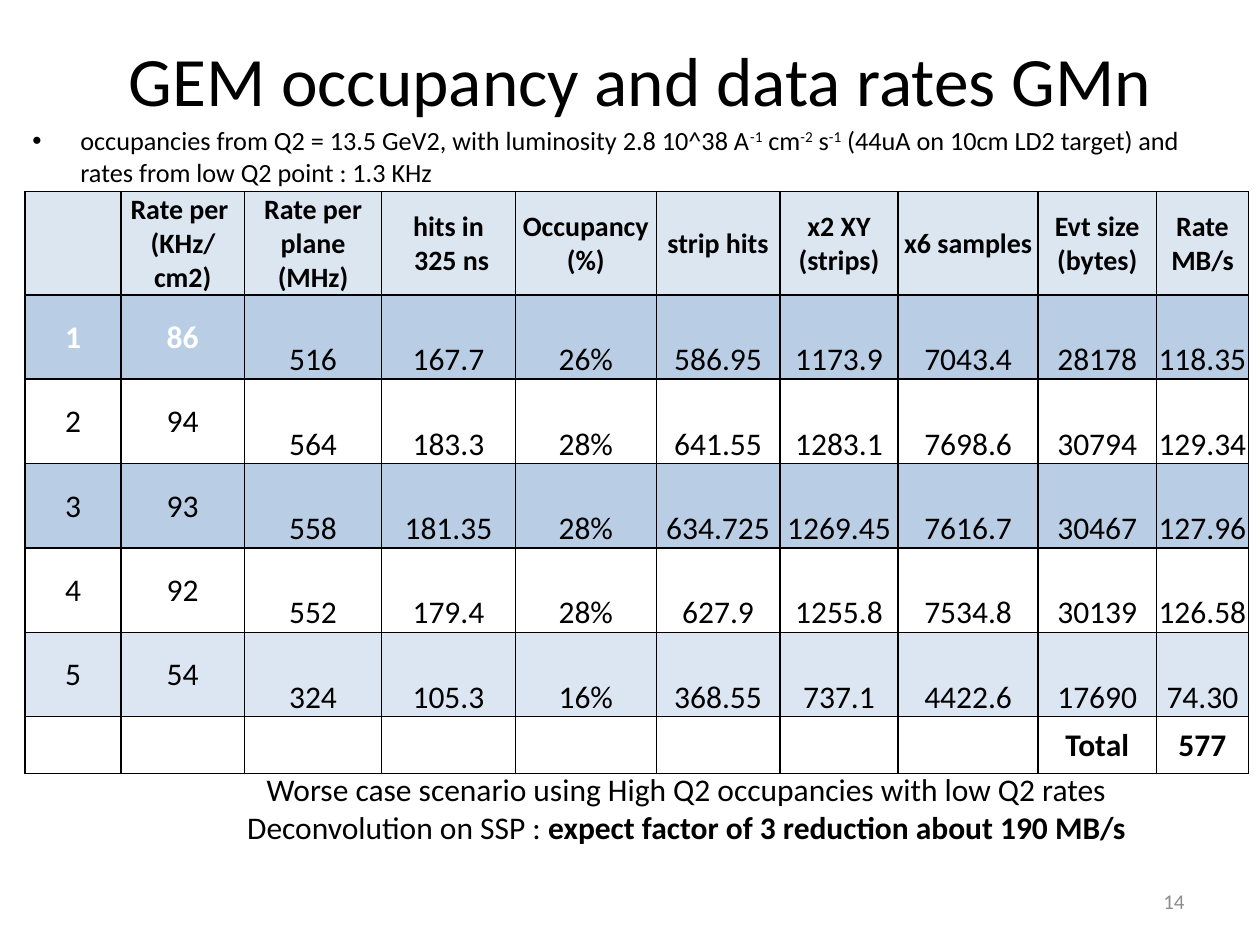
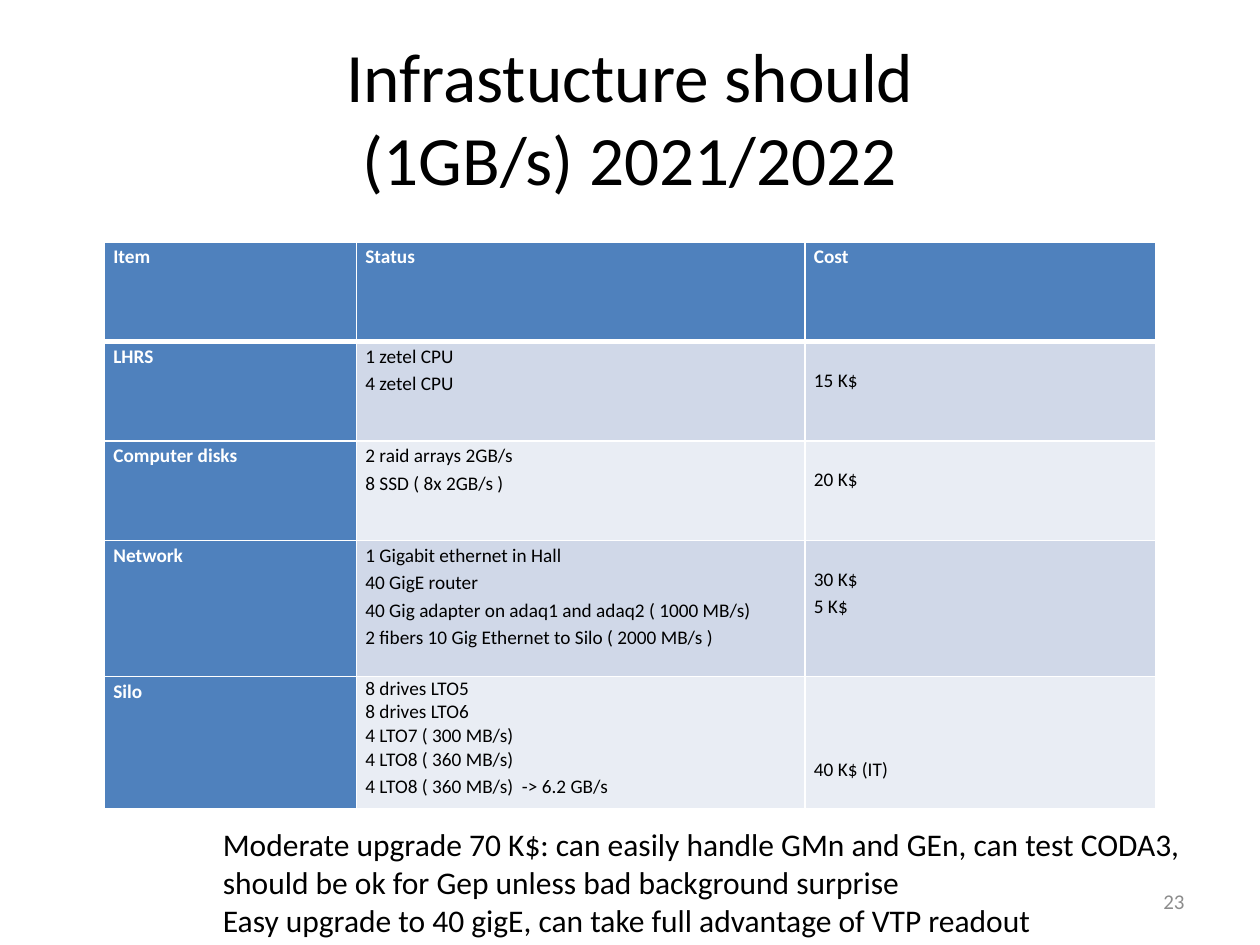
from dataclasses import dataclass, replace

from lxml import etree
from pptx import Presentation
from pptx.dml.color import RGBColor
from pptx.enum.text import MSO_ANCHOR, PP_ALIGN
from pptx.oxml.ns import qn
from pptx.util import Inches, Pt

LEFT, CENTER, RIGHT = PP_ALIGN.LEFT, PP_ALIGN.CENTER, PP_ALIGN.RIGHT
TOP, MIDDLE, BOTTOM = MSO_ANCHOR.TOP, MSO_ANCHOR.MIDDLE, MSO_ANCHOR.BOTTOM

FONT = "Calibri"
BLACK = "000000"
WHITE = "FFFFFF"
NUMBER_GREY = "8C8C8C"
RATE_HEADER = "DCE6F1"
RATE_FILLS = ["B9CDE5", WHITE, "B9CDE5", WHITE, "DCE6F2", WHITE]
ITEM_BLUE = "4F81BD"
ITEM_FILLS = ["D0D8E8", "E9EDF4"]


@dataclass(frozen=True)
class Run:
    text: str
    bold: bool = False
    raised: bool = False


@dataclass(frozen=True)
class Style:
    size: float
    color: str = BLACK
    bold: bool = False
    align: int = LEFT
    line_spacing: float = 1.0


@dataclass(frozen=True)
class Box:
    left: float
    top: float
    width: float
    height: float


@dataclass(frozen=True)
class CellLook:
    fill: str
    anchor: int
    margins: tuple[float, float, float, float]
    border: str
    top_line: float = 1
    bottom_line: float = 1


@dataclass(frozen=True)
class Upgrade:
    item: str
    status: list[str]
    cost: list[str]
    cost_offset: float
    height: float = 0.79


TITLE = Style(39.6, align=CENTER)
BULLET = Style(15)
REMARK = Style(18)
PAGE_NUMBER = Style(12, NUMBER_GREY, align=RIGHT)
RATE_HEAD = Style(16, bold=True, align=CENTER)
RATE_VALUE = Style(18, align=CENTER)
ITEM_LABEL = Style(11, WHITE, True, line_spacing=1.15)
ITEM_TEXT = Style(11, line_spacing=1.15)

RATE_WIDTHS = [0.76, 0.98, 1.09, 1.06, 1.12, 0.98, 0.94, 1.11, 0.94, 0.73]
RATE_HEIGHTS = [0.82] + [0.67] * 5 + [0.45]
RATE_HEADINGS = [
    [], ["Rate per ", "(KHz/cm2)"], ["Rate per plane", "(MHz)"],
    ["hits in", " 325 ns"], ["Occupancy", "(%)"], ["strip hits"],
    ["x2 XY", "(strips)"], ["x6 samples"], ["Evt size", "(bytes)"],
    ["Rate MB/s"],
]
RATE_ROWS = [
    ["1", "86", "516", "167.7", "26%", "586.95", "1173.9", "7043.4", "28178", "118.35"],
    ["2", "94", "564", "183.3", "28%", "641.55", "1283.1", "7698.6", "30794", "129.34"],
    ["3", "93", "558", "181.35", "28%", "634.725", "1269.45", "7616.7", "30467", "127.96"],
    ["4", "92", "552", "179.4", "28%", "627.9", "1255.8", "7534.8", "30139", "126.58"],
    ["5", "54", "324", "105.3", "16%", "368.55", "737.1", "4422.6", "17690", "74.30"],
    [""] * 8 + ["Total", "577"],
]
ITEM_WIDTHS = [2, 3.56, 2.78]
UPGRADES = [
    Upgrade("LHRS", ["1 zetel CPU", "4 zetel CPU"], ["15 K$"], 0.19),
    Upgrade("Computer disks", ["2 raid arrays 2GB/s", "8 SSD ( 8x 2GB/s )"],
            ["20 K$"], 0.19),
    Upgrade("Network", ["1 Gigabit ethernet in Hall", "40 GigE router",
                        "40 Gig adapter on adaq1 and adaq2 ( 1000 MB/s)",
                        "2 fibers 10 Gig Ethernet to Silo ( 2000 MB/s )"],
            ["30 K$", "5 K$"], 0.19, 1.08),
    Upgrade("Silo", ["8 drives LTO5", "8 drives LTO6", "4 LTO7 ( 300 MB/s)",
                     "4 LTO8 ( 360 MB/s)", "4 LTO8 ( 360 MB/s)  -> 6.2 GB/s"],
            ["40 K$ (IT)"], 0.62, 1.05),
]


def rgb(color: str) -> RGBColor:
    return RGBColor.from_string(color)


def plain(*lines: str) -> list[list[Run]]:
    return [[Run(line)] for line in lines]


def write(frame, paragraphs: list[list[Run]], style: Style) -> None:
    for index, runs in enumerate(paragraphs):
        paragraph = frame.paragraphs[0] if index == 0 else frame.add_paragraph()
        paragraph.alignment = style.align
        paragraph.line_spacing = style.line_spacing
        for part in runs:
            run = paragraph.add_run()
            run.text = part.text
            run.font.name = FONT
            run.font.size = Pt(style.size)
            run.font.bold = style.bold or part.bold
            run.font.color.rgb = rgb(style.color)
            if part.raised:
                run._r.get_or_add_rPr().set("baseline", "30000")


def add_text(slide, box: Box, paragraphs: list[list[Run]], style: Style,
             anchor: int = TOP, wrap: bool = True):
    frame = slide.shapes.add_textbox(
        Inches(box.left), Inches(box.top), Inches(box.width), Inches(box.height)
    ).text_frame
    frame.word_wrap = wrap
    frame.vertical_anchor = anchor
    write(frame, paragraphs, style)
    return frame


def add_bullet(paragraph, indent: float) -> None:
    properties = paragraph._p.get_or_add_pPr()
    properties.set("marL", str(Inches(indent)))
    properties.set("indent", str(-Inches(indent)))
    etree.SubElement(properties, qn("a:buFont")).set("typeface", "Arial")
    etree.SubElement(properties, qn("a:buChar")).set("char", "•")


def add_grid(slide, left: float, top: float, widths: list[float], heights: list[float]):
    grid = slide.shapes.add_table(
        len(heights), len(widths), Inches(left), Inches(top),
        Inches(sum(widths)), Inches(sum(heights))
    ).table
    for column, width in zip(grid.columns, widths):
        column.width = Inches(width)
    for row, height in zip(grid.rows, heights):
        row.height = Inches(height)
    return grid


def fill_cell(cell, paragraphs: list[list[Run]], style: Style, look: CellLook) -> None:
    margins = [Inches(margin) for margin in look.margins]
    cell.margin_left, cell.margin_top, cell.margin_right, cell.margin_bottom = margins
    cell.vertical_anchor = look.anchor
    cell.fill.solid()
    cell.fill.fore_color.rgb = rgb(look.fill)
    properties = cell._tc.get_or_add_tcPr()
    sides = {"L": 1, "R": 1, "T": look.top_line, "B": look.bottom_line}
    for index, (side, width) in enumerate(sides.items()):
        line = etree.Element(qn(f"a:ln{side}"), w=str(Pt(width)))
        solid = etree.SubElement(line, qn("a:solidFill"))
        etree.SubElement(solid, qn("a:srgbClr")).set("val", look.border)
        properties.insert(index, line)
    write(cell.text_frame, paragraphs, style)


def add_slide(deck, title_box: Box, title: list[str], number: int):
    slide = deck.slides.add_slide(deck.slide_layouts[6])
    add_text(slide, title_box, plain(*title), TITLE, MIDDLE)
    add_text(slide, Box(7.17, 6.95, 2.33, 0.4), plain(str(number)), PAGE_NUMBER, MIDDLE)
    return slide


def build_rates(deck) -> None:
    slide = add_slide(deck, Box(0.58, 0, 9, 1.25),
                      ["GEM occupancy and data rates GMn"], 14)
    conditions = [
        Run("occupancies from Q2 = 13.5 GeV2, with luminosity 2.8 10^38 A"),
        Run("-1", raised=True), Run(" cm"), Run("-2", raised=True),
        Run(" s"), Run("-1", raised=True),
        Run(" (44uA on 10cm LD2 target) and rates from low Q2 point : 1.3 KHz"),
    ]
    body = add_text(slide, Box(0.16, 0.94, 9.53, 3.57), [conditions], BULLET)
    add_bullet(body.paragraphs[0], 0.38)

    grid = add_grid(slide, 0.2, 1.52, RATE_WIDTHS, RATE_HEIGHTS)
    header = CellLook(RATE_HEADER, MIDDLE, (0.01, 0.01, 0.01, 0), BLACK)
    for column, heading in enumerate(RATE_HEADINGS):
        fill_cell(grid.cell(0, column), plain(*heading), RATE_HEAD, header)
    last = len(RATE_ROWS)
    for row, (values, fill) in enumerate(zip(RATE_ROWS, RATE_FILLS), start=1):
        for column, value in enumerate(values):
            is_key = column < 2
            style = replace(RATE_VALUE, bold=row == last)
            if row == 1 and is_key:
                style = replace(style, color=WHITE, bold=True)
            anchor = MIDDLE if is_key or row == last else BOTTOM
            look = replace(header, fill=fill, anchor=anchor)
            fill_cell(grid.cell(row, column), plain(value) if value else [], style, look)

    add_text(slide, Box(1.7, 6.06, 7.5, 0.71), [
        [Run("Worse case scenario using High Q2 occupancies with low Q2 rates")],
        [Run("Deconvolution on SSP : "),
         Run("expect factor of 3 reduction about 190 MB/s", bold=True)],
    ], replace(REMARK, align=CENTER))


def build_infrastructure(deck) -> None:
    slide = add_slide(deck, Box(0.5, 0.3, 9, 1.25),
                      ["Infrastucture should", "(1GB/s) 2021/2022"], 23)
    heights = [0.79] + [upgrade.height for upgrade in UPGRADES]
    grid = add_grid(slide, 0.83, 1.92, ITEM_WIDTHS, heights)
    label = CellLook(ITEM_BLUE, TOP, (0.07, 0, 0.07, 0), WHITE)
    for column, heading in enumerate(["Item", "Status", "Cost"]):
        fill_cell(grid.cell(0, column), plain(heading), ITEM_LABEL,
                  replace(label, bottom_line=3))
    for row, upgrade in enumerate(UPGRADES, start=1):
        label_look = replace(label, top_line=3 if row == 1 else 1)
        look = replace(label_look, fill=ITEM_FILLS[(row - 1) % 2])
        cost_look = replace(look, margins=(0.07, upgrade.cost_offset, 0.07, 0))
        fill_cell(grid.cell(row, 0), plain(upgrade.item), ITEM_LABEL, label_look)
        fill_cell(grid.cell(row, 1), plain(*upgrade.status), ITEM_TEXT, look)
        fill_cell(grid.cell(row, 2), plain(*upgrade.cost), ITEM_TEXT, cost_look)
    for paragraph in grid.cell(len(UPGRADES), 1).text_frame.paragraphs[:-1]:
        paragraph.line_spacing = 1.0

    add_text(slide, Box(1.67, 6.5, 7.89, 1.01), plain(
        "Moderate upgrade 70 K$: can easily handle GMn and GEn, can test CODA3,",
        "should be ok for Gep unless bad background surprise",
        "Easy upgrade to 40 gigE, can take full advantage of VTP readout",
    ), REMARK, wrap=False)


def main() -> None:
    deck = Presentation()
    deck.slide_width = Inches(10)
    deck.slide_height = Inches(7.5)
    build_rates(deck)
    build_infrastructure(deck)
    deck.save("out.pptx")


if __name__ == "__main__":
    main()
